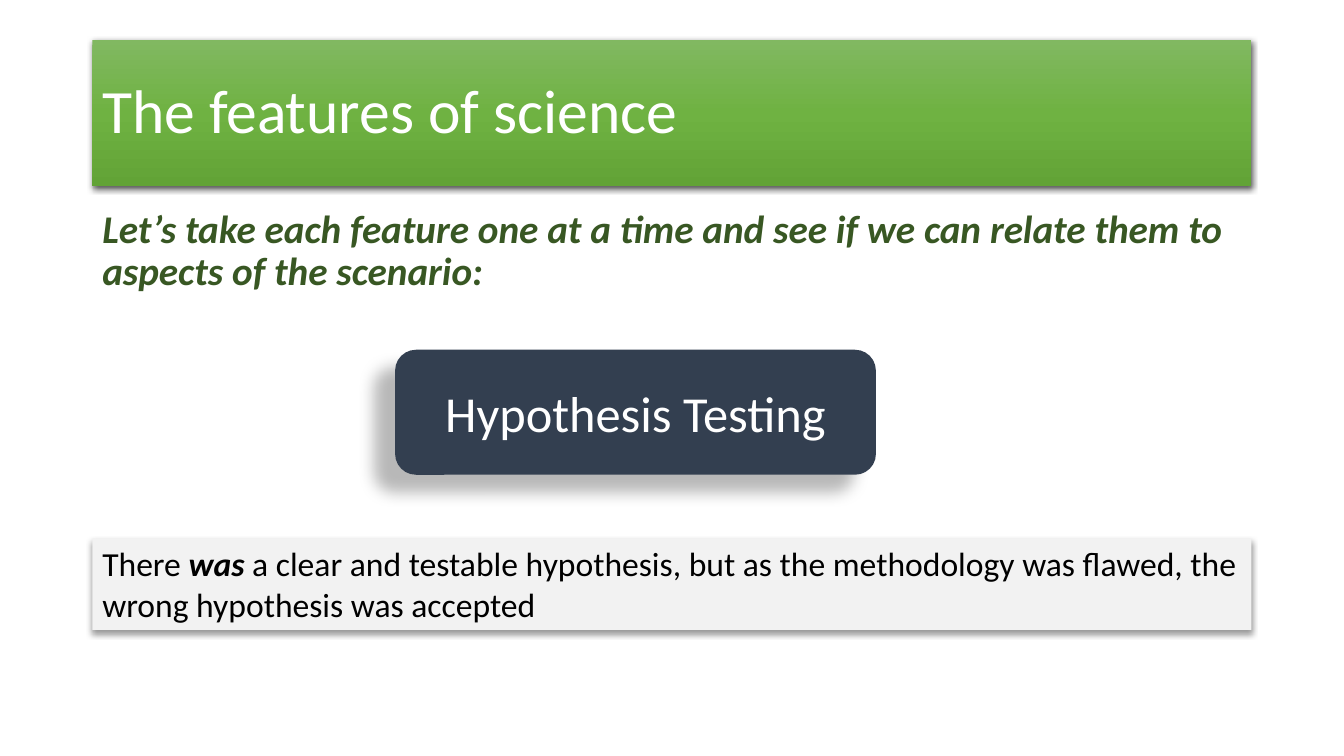
from copy import deepcopy
from dataclasses import dataclass, field

from lxml.etree import SubElement
from pptx import Presentation
from pptx.dml.color import RGBColor
from pptx.enum.shapes import MSO_SHAPE
from pptx.enum.text import MSO_ANCHOR, PP_ALIGN
from pptx.oxml.ns import qn
from pptx.shapes.autoshape import Shape
from pptx.util import Pt

WHITE = RGBColor(0xFF, 0xFF, 0xFF)
BLACK = RGBColor(0, 0, 0)
FOREST = RGBColor(0x38, 0x57, 0x23)
NAVY = RGBColor(0x33, 0x3F, 0x50)
PALE = RGBColor(0xF2, 0xF2, 0xF2)
GREENS = [RGBColor(0x81, 0xB8, 0x61), RGBColor(0x6F, 0xB2, 0x42),
          RGBColor(0x62, 0xA3, 0x36)]
LEFT, WIDTH = 66, 828
STRONG = {"bold": True, "italic": True}


@dataclass
class Shade:
    alpha: int
    blur: float
    dist: float
    angle: int


@dataclass
class Panel:
    """A text panel; box is left, top, width, height in points."""
    box: tuple[float, float, float, float]
    runs: list[tuple[str, dict]]
    size: int
    ink: RGBColor
    fills: list[RGBColor] = field(default_factory=list)
    shade: Shade | None = None
    kind: MSO_SHAPE = MSO_SHAPE.RECTANGLE
    anchor: MSO_ANCHOR = MSO_ANCHOR.TOP
    para: dict = field(default_factory=dict)


PANELS = [
    Panel((LEFT, 146.16, WIDTH, 80.64),
          [("Let’s take each feature one at a time and see if we can relate "
            "them to aspects of the scenario:", STRONG)],
          28, FOREST, para={"line_spacing": 0.9, "space_before": Pt(10)}),
    Panel((LEFT, 28.75, WIDTH, 104.4), [("The features of science", {})],
          44, WHITE, GREENS, Shade(63, 4.5, 1.5, 90),
          anchor=MSO_ANCHOR.MIDDLE, para={"line_spacing": 0.9}),
    Panel((282.24, 249.84, 343.44, 89.28), [("Hypothesis Testing", {})],
          36, WHITE, [NAVY], Shade(28, 11.8, 19.7, 141),
          MSO_SHAPE.ROUNDED_RECTANGLE, MSO_ANCHOR.MIDDLE,
          {"alignment": PP_ALIGN.CENTER}),
    Panel((LEFT, 384.48, WIDTH, 65.5),
          [("There ", {}), ("was", STRONG),
           (" a clear and testable hypothesis, but as the methodology was "
            "flawed, the wrong hypothesis was accepted", {})],
          24, BLACK, [PALE], Shade(40, 4, 3, 90)),
]


def paint(shape: Shape, fills: list[RGBColor]) -> None:
    """Fill with nothing, one colour, or an even top-down gradient."""
    fill = shape.fill
    if not fills:
        fill.background()
    elif len(fills) == 1:
        fill.solid()
        fill.fore_color.rgb = fills[0]
    else:
        fill.gradient()
        fill.gradient_angle = 270
        stops = shape._element.spPr.find(qn("a:gradFill")).find(qn("a:gsLst"))
        for _ in fills[2:]:
            stops.append(deepcopy(stops[0]))
        for i, (stop, tint) in enumerate(zip(fill.gradient_stops, fills)):
            stop.position = i / (len(fills) - 1)
            stop.color.rgb = tint


def cast(shape: Shape, shade: Shade | None) -> None:
    """Replace the theme shadow with the given one, or with none."""
    shape.shadow.inherit = False
    if shade is None:
        return
    effects = shape._element.spPr.find(qn("a:effectLst"))
    outer = SubElement(effects, qn("a:outerShdw"), {
        "blurRad": str(int(Pt(shade.blur))), "dist": str(int(Pt(shade.dist))),
        "dir": str(shade.angle * 60000), "algn": "ctr", "rotWithShape": "0"})
    tint = SubElement(outer, qn("a:srgbClr"), val=str(BLACK))
    SubElement(tint, qn("a:alpha"), val=str(shade.alpha * 1000))


def write(shape: Shape, panel: Panel) -> None:
    frame = shape.text_frame
    frame.word_wrap = True
    frame.vertical_anchor = panel.anchor
    para = frame.paragraphs[0]
    for name, value in ({"alignment": PP_ALIGN.LEFT} | panel.para).items():
        setattr(para, name, value)
    for text, style in panel.runs:
        run = para.add_run()
        run.text = text
        run.font.color.rgb = panel.ink
        base = {"name": "Calibri", "size": Pt(panel.size)}
        for name, value in (base | style).items():
            setattr(run.font, name, value)


def main() -> None:
    deck = Presentation()
    deck.slide_width, deck.slide_height = Pt(960), Pt(540)
    slide = deck.slides.add_slide(deck.slide_layouts[6])
    for panel in PANELS:
        place = [Pt(n) for n in panel.box]
        if panel.fills:
            shape = slide.shapes.add_shape(panel.kind, *place)
            shape.line.fill.background()
            paint(shape, panel.fills)
            cast(shape, panel.shade)
        else:
            shape = slide.shapes.add_textbox(*place)
        write(shape, panel)
    deck.save("out.pptx")


if __name__ == "__main__":
    main()
